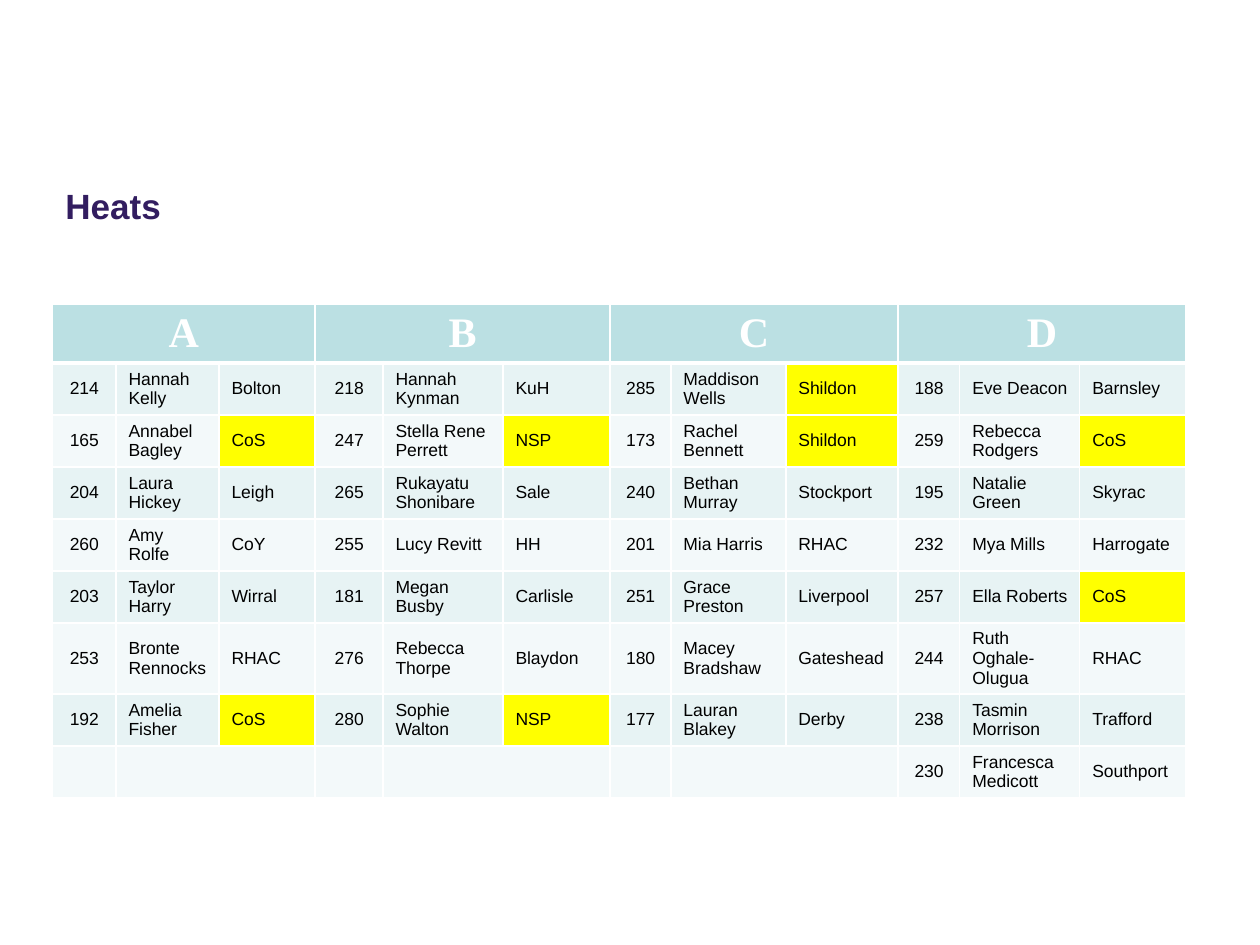
from lxml import etree
from pptx import Presentation, util as u
from pptx.dml.color import RGBColor
from pptx.enum import text
from pptx.oxml.ns import qn

PX = u.Inches(1) // 126
COLORS = {
    "title": "321D60", "header": "BBE0E3", "white": "FFFFFF", "black": "000000",
    "odd": "E7F3F4", "even": "F3F9FA", "highlight": "FFFF00",
}
HIGHLIGHTED_CLUBS = {"CoS", "NSP", "Shildon"}
HEATS = {
    "A": [
        ("214", "Hannah Kelly", "Bolton"), ("165", "Annabel Bagley", "CoS"),
        ("204", "Laura Hickey", "Leigh"), ("260", "Amy Rolfe", "CoY"),
        ("203", "Taylor Harry", "Wirral"), ("253", "Bronte Rennocks", "RHAC"),
        ("192", "Amelia Fisher", "CoS"),
    ],
    "B": [
        ("218", "Hannah Kynman", "KuH"), ("247", "Stella Rene Perrett", "NSP"),
        ("265", "Rukayatu Shonibare", "Sale"), ("255", "Lucy Revitt", "HH"),
        ("181", "Megan Busby", "Carlisle"), ("276", "Rebecca Thorpe", "Blaydon"),
        ("280", "Sophie Walton", "NSP"),
    ],
    "C": [
        ("285", "Maddison Wells", "Shildon"), ("173", "Rachel Bennett", "Shildon"),
        ("240", "Bethan Murray", "Stockport"), ("201", "Mia Harris", "RHAC"),
        ("251", "Grace Preston", "Liverpool"), ("180", "Macey Bradshaw", "Gateshead"),
        ("177", "Lauran Blakey", "Derby"),
    ],
    "D": [
        ("188", "Eve Deacon", "Barnsley"), ("259", "Rebecca Rodgers", "CoS"),
        ("195", "Natalie Green", "Skyrac"), ("232", "Mya Mills", "Harrogate"),
        ("257", "Ella Roberts", "CoS"), ("244", "Ruth Oghale-Olugua", "RHAC"),
        ("238", "Tasmin Morrison", "Trafford"), ("230", "Francesca Medicott", "Southport"),
    ],
}
COLUMN_WIDTHS = [64, 103, 96, 68, 120, 107, 61, 115, 112, 62, 120, 106]
ROW_HEIGHTS = [59, 52, 52, 52, 52, 52, 71, 52, 52]


def set_font(paragraph, name, size, color, bold):
    font = paragraph.font
    font.name, font.size, font.bold = name, u.Pt(size), bold
    font.color.rgb = RGBColor.from_string(COLORS[color])


def style_cell(cell, fill, top, bottom):
    """Fill a cell and give it white borders, top and bottom in points."""
    properties = cell._tc.get_or_add_tcPr()
    for tag, width in (("a:lnL", 1), ("a:lnR", 1), ("a:lnT", top), ("a:lnB", bottom)):
        line = etree.SubElement(properties, qn(tag), w=str(u.Pt(width)))
        solid = etree.SubElement(line, qn("a:solidFill"))
        etree.SubElement(solid, qn("a:srgbClr"), val=COLORS["white"])
    cell.fill.solid()
    cell.fill.fore_color.rgb = RGBColor.from_string(COLORS[fill])
    cell.vertical_anchor = text.MSO_ANCHOR.MIDDLE
    cell.margin_top = cell.margin_bottom = 4 * PX
    cell.margin_right = 12 * PX


presentation = Presentation()
presentation.slide_width, presentation.slide_height = 1260 * PX, 945 * PX
slide = presentation.slides.add_slide(presentation.slide_layouts[6])

title = slide.shapes.add_textbox(53 * PX, 178 * PX, 840 * PX, 73 * PX)
title.text_frame.word_wrap = True
title.text_frame.text = "Heats"
set_font(title.text_frame.paragraphs[0], "Arial", 20, "title", True)

table = slide.shapes.add_table(
    len(ROW_HEIGHTS), len(COLUMN_WIDTHS), 52 * PX, 304 * PX,
    sum(COLUMN_WIDTHS) * PX, sum(ROW_HEIGHTS) * PX,
).table
table.first_row = table.horz_banding = False
for column, width in zip(table.columns, COLUMN_WIDTHS):
    column.width = width * PX
for row, height in zip(table.rows, ROW_HEIGHTS):
    row.height = height * PX

for heat_index, (heat, runners) in enumerate(HEATS.items()):
    first = heat_index * 3
    for offset in range(3):
        style_cell(table.cell(0, first + offset), "header", 1, 3)
    header = table.cell(0, first)
    header.merge(table.cell(0, first + 2))
    header.text = heat
    header_paragraph = header.text_frame.paragraphs[0]
    header_paragraph.alignment = text.PP_ALIGN.CENTER
    set_font(header_paragraph, "Times New Roman", 24, "white", True)

    for row_index in range(1, len(ROW_HEIGHTS)):
        has_runner = row_index <= len(runners)
        values = runners[row_index - 1] if has_runner else ("", "", "")
        band = "odd" if row_index % 2 else "even"
        for offset, value in enumerate(values):
            cell = table.cell(row_index, first + offset)
            fill = "highlight" if value in HIGHLIGHTED_CLUBS else band
            style_cell(cell, fill, 3 if row_index == 1 else 1, 1)
            cell.text = value
            paragraph = cell.text_frame.paragraphs[0]
            if offset == 0:
                paragraph.alignment = text.PP_ALIGN.CENTER
            set_font(paragraph, "Arial", 10, "black", False)
        if not has_runner:
            table.cell(row_index, first + 1).merge(table.cell(row_index, first + 2))

presentation.save("out.pptx")
